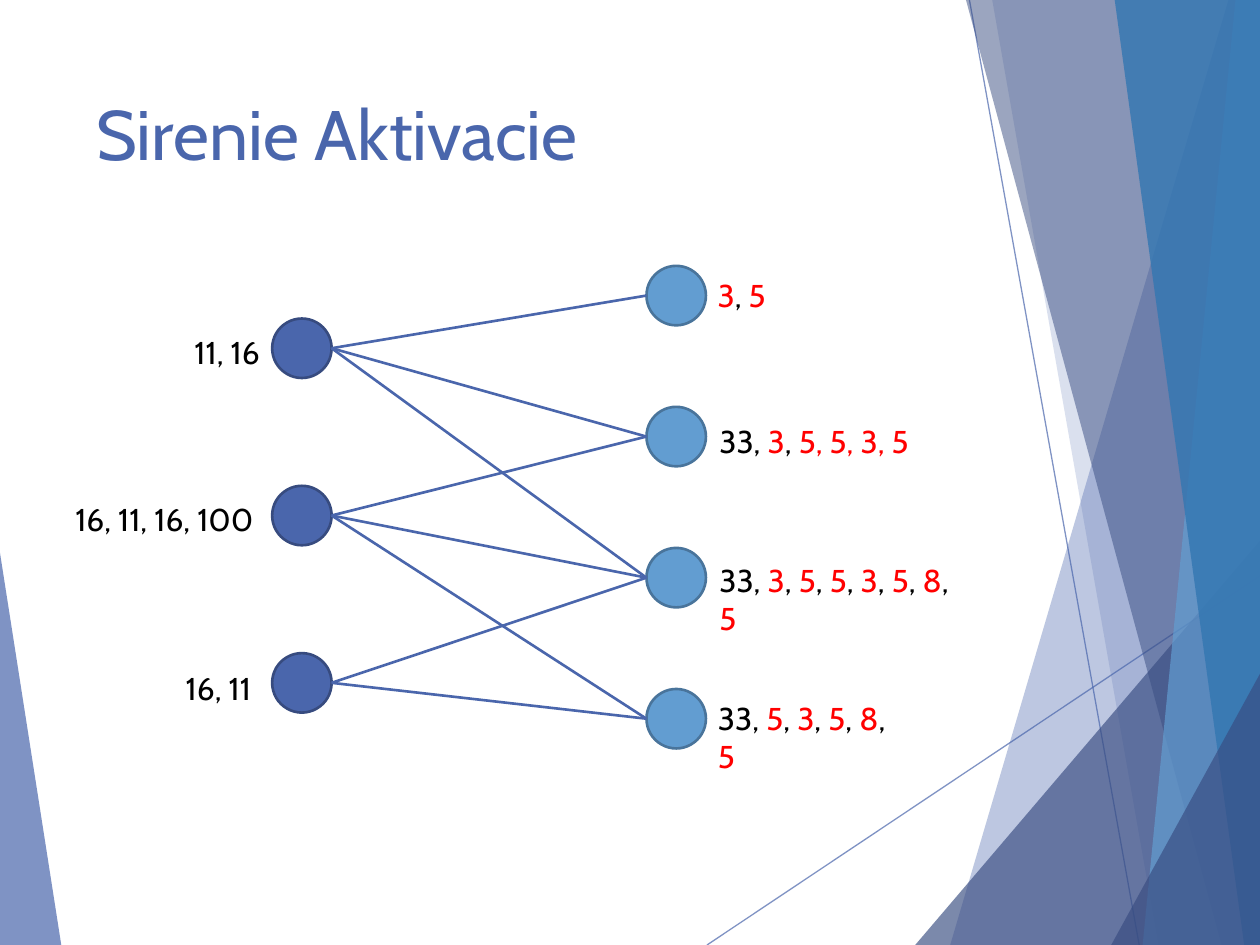
from lxml import etree
from pptx import Presentation
from pptx.dml.color import RGBColor
from pptx.enum.shapes import MSO_CONNECTOR, MSO_SHAPE
from pptx.enum.text import MSO_ANCHOR, PP_ALIGN
from pptx.oxml.ns import qn
from pptx.util import Pt

STRAIGHT = MSO_CONNECTOR.STRAIGHT
OVAL = MSO_SHAPE.OVAL
TOP = MSO_ANCHOR.TOP
LEFT, RIGHT = PP_ALIGN.LEFT, PP_ALIGN.RIGHT

WIDTH, HEIGHT = 720, 540
TITLE_ONLY = 5
COLORS = {
    "blue": "4A66AC",
    "blue_edge": "374B7F",
    "sky": "629DD1",
    "sky_edge": "49749B",
    "navy": "384C81",
    "ocean": "3477B2",
    "black": "000000",
    "red": "FF0000",
}

LEFT_FACET = ([(0, 316), (35, 540), (0, 540)], "blue", 70)
RIGHT_FACETS = [
    ([(702, 0), (543, 540), (720, 540), (720, 0)], "blue", 36),
    ([(567, 0), (662, 540), (720, 540), (720, 0)], "blue", 20),
    ([(523, 540), (720, 309), (720, 540)], "navy", 66),
    ([(552, 0), (698, 540), (720, 540), (720, 0)], "navy", 50),
    ([(706, 0), (653, 540), (720, 540), (720, 0)], "sky", 70),
    ([(637, 0), (711, 540), (720, 540), (720, 0)], "ocean", 82),
    ([(635, 540), (720, 385), (720, 540)], "navy", 66),
]
THIN_LINES = [((404, 540), (720, 329)), ((554, 0), (651, 540))]

NODE_SIZE = 34
INPUTS = [(155.5, 182 + 95.6 * row) for row in range(3)]
OUTPUTS = [(369.4, 151.9 + 80.6 * row) for row in range(4)]
EDGES = [(0, 0), (0, 1), (0, 2), (1, 1), (1, 2), (1, 3), (2, 2), (2, 3)]

# Segments between bars alternate black and red.
LABELS = [
    ("11, 16", 95.5, 186.5, 60, RIGHT),
    ("16, 11, 16, 100", 28, 282, 124, RIGHT),
    ("16, 11", 90.5, 378.5, 60, RIGHT),
    ("|3|,| 5", 403, 154, 50, LEFT),
    ("33, |3|,| 5, 5, 3, 5", 404, 237.5, 128, LEFT),
    ("33, |3|, |5|, |5|,| 3|,| 5|,| 8|,| 5", 404, 317, 158.4, LEFT),
    ("33, |5|, |3|, |5|, |8|,| 5", 403.2, 396, 122.4, LEFT),
]


def rgb(name):
    return RGBColor.from_string(COLORS[name])


def apply_format(target, values):
    for name, value in values.items():
        setattr(target, name, value)


def set_opacity(fill_parent, percent):
    color = fill_parent.find(".//" + qn("a:srgbClr"))
    etree.SubElement(color, qn("a:alpha"), val=str(percent * 1000))


def add_facet(slide, points, color, opacity):
    start, *others = [(Pt(x), Pt(y)) for x, y in points]
    builder = slide.shapes.build_freeform(*start)
    builder.add_line_segments(others, close=True)
    shape = builder.convert_to_shape()
    shape.shadow.inherit = False
    shape.fill.solid()
    shape.fill.fore_color.rgb = rgb(color)
    shape.line.fill.background()
    set_opacity(shape.fill._xPr, opacity)


def add_line(slide, start, end, width, opacity=100):
    points = [Pt(value) for value in (*start, *end)]
    connector = slide.shapes.add_connector(STRAIGHT, *points)
    connector.line.color.rgb = rgb("blue")
    connector.line.width = Pt(width)
    properties = connector._element.spPr
    if opacity < 100:
        set_opacity(properties, opacity)
    etree.SubElement(properties, qn("a:effectLst"))


def add_node(slide, position, fill, edge):
    left, top = position
    shape = slide.shapes.add_shape(
        OVAL, Pt(left), Pt(top), Pt(NODE_SIZE), Pt(NODE_SIZE))
    shape.shadow.inherit = False
    shape.fill.solid()
    shape.fill.fore_color.rgb = rgb(fill)
    shape.line.color.rgb = rgb(edge)
    shape.line.width = Pt(1.5)


def add_run(paragraph, text, size, color):
    run = paragraph.add_run()
    run.text = text
    apply_format(run.font, {"name": "Cabin", "size": Pt(size)})
    run.font.color.rgb = rgb(color)


def add_label(slide, text, left, top, width, alignment):
    box = slide.shapes.add_textbox(Pt(left), Pt(top), Pt(width), Pt(29))
    box.text_frame.word_wrap = True
    paragraph = box.text_frame.paragraphs[0]
    paragraph.alignment = alignment
    for index, segment in enumerate(text.split("|")):
        if segment:
            add_run(paragraph, segment, 18, ("black", "red")[index % 2])


def format_title(slide):
    title = slide.shapes.title
    apply_format(title, {"left": Pt(48), "top": Pt(48),
                         "width": Pt(500), "height": Pt(104)})
    apply_format(title.text_frame, {"vertical_anchor": TOP, "word_wrap": True})
    paragraph = title.text_frame.paragraphs[0]
    apply_format(paragraph, {"alignment": LEFT, "line_spacing": 1.0})
    add_run(paragraph, "Sirenie Aktivacie", 40, "blue")


def add_background(slide):
    add_facet(slide, *LEFT_FACET)
    for start, end in THIN_LINES:
        add_line(slide, start, end, 0.75, 70)
    for facet in RIGHT_FACETS:
        add_facet(slide, *facet)


def add_network(slide):
    for position in INPUTS:
        add_node(slide, position, "blue", "blue_edge")
    for position in OUTPUTS:
        add_node(slide, position, "sky", "sky_edge")
    radius = NODE_SIZE / 2
    for source, target in EDGES:
        source_left, source_top = INPUTS[source]
        target_left, target_top = OUTPUTS[target]
        add_line(slide, (source_left + NODE_SIZE, source_top + radius),
                 (target_left, target_top + radius), 1.5)


def main():
    presentation = Presentation()
    apply_format(presentation, {"slide_width": Pt(WIDTH),
                                "slide_height": Pt(HEIGHT)})
    slide = presentation.slides.add_slide(
        presentation.slide_layouts[TITLE_ONLY])
    add_background(slide)
    format_title(slide)
    add_network(slide)
    for label in LABELS:
        add_label(slide, *label)
    presentation.save("out.pptx")


if __name__ == "__main__":
    main()
